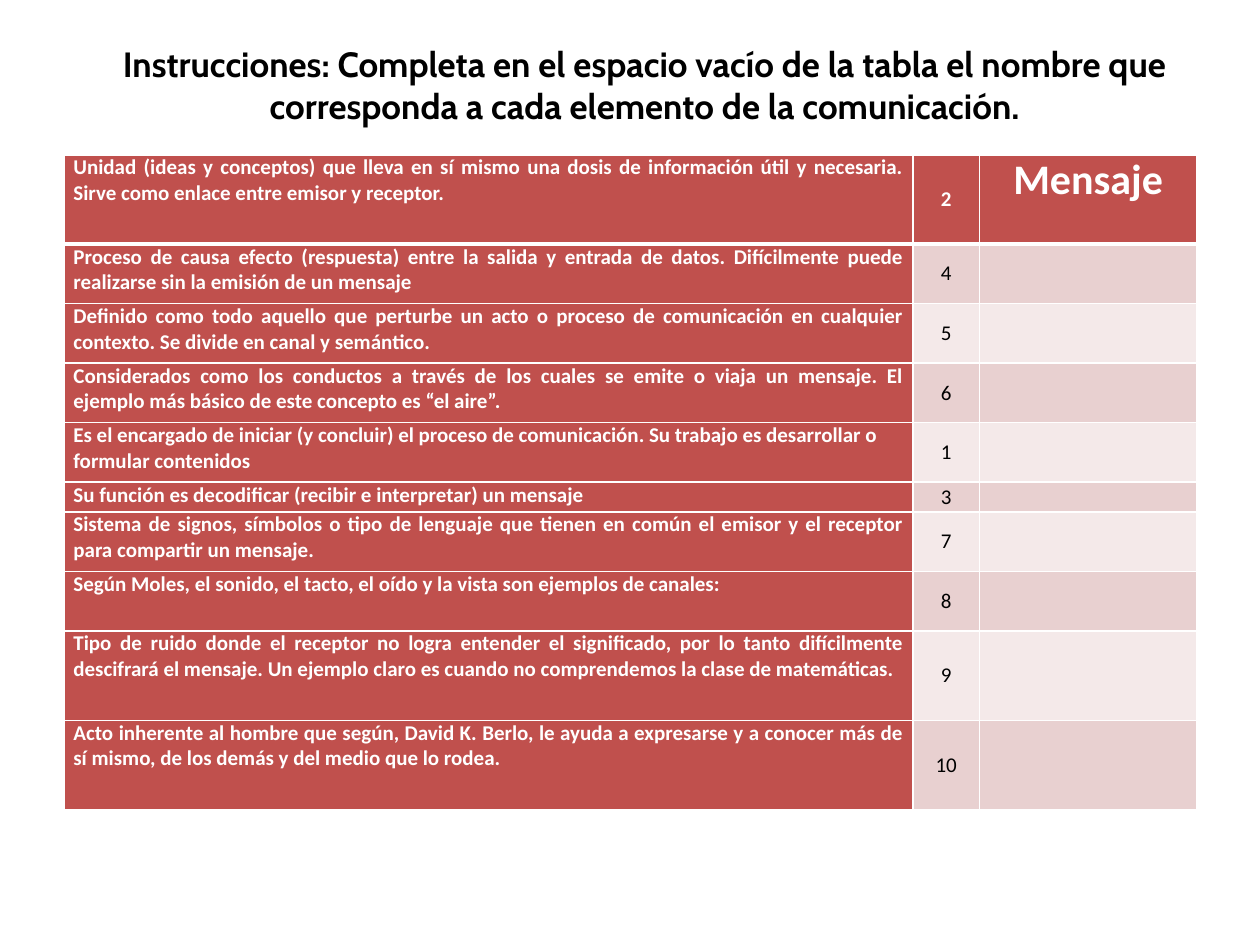
"""Builds a slide with a fill-in table about the elements of communication."""
from dataclasses import dataclass

from lxml import etree
from pptx import Presentation
from pptx import util as u
from pptx.dml.color import RGBColor
from pptx.enum import text
from pptx.oxml import ns

RED, WHITE, BLACK = "C0504D", "FFFFFF", "000000"
BANDS = ("E8D0D0", "F4E9E9")
COLUMN_WIDTHS = (17.1, 1.35, 4.37)
ALIGN = text.PP_ALIGN


@dataclass(frozen=True)
class Element:
    description: str
    number: int
    height: float = 1.2
    answer: str = ""
    align: text.PP_ALIGN = ALIGN.JUSTIFY


ELEMENTS = (
    Element("Unidad (ideas y conceptos) que lleva en sí mismo una dosis de información útil y necesaria. "
            "Sirve como enlace entre emisor y receptor.", 2, 1.8, "Mensaje"),
    Element("Proceso de causa efecto (respuesta) entre la salida y entrada de datos. Difícilmente puede "
            "realizarse sin la emisión de un mensaje", 4),
    Element("Definido como todo aquello que perturbe un acto o proceso de comunicación en cualquier "
            "contexto. Se divide en canal y semántico.", 5),
    Element("Considerados como los conductos a través de los cuales se emite o viaja un mensaje. El "
            "ejemplo más básico de este concepto es “el aire”.", 6),
    Element("Es el encargado de iniciar (y concluir) el proceso de comunicación. Su trabajo es desarrollar o "
            "formular contenidos", 1, align=ALIGN.LEFT),
    Element("Su función es decodificar (recibir e interpretar) un mensaje", 3, 0.6),
    Element("Sistema de signos, símbolos o tipo de lenguaje que tienen en común el emisor y el receptor "
            "para compartir un mensaje.", 7),
    Element("Según Moles, el sonido, el tacto, el oído y la vista son ejemplos de canales:", 8,
            align=ALIGN.LEFT),
    Element("Tipo de ruido donde el receptor no logra entender el significado, por lo tanto difícilmente "
            "descifrará el mensaje. Un ejemplo claro es cuando no comprendemos la clase de matemáticas.", 9, 1.8),
    Element("Acto inherente al hombre que según, David K. Berlo, le ayuda a expresarse y a conocer más de "
            "sí mismo, de los demás y del medio que lo rodea.", 10, 1.8),
)


def rgb(color: str) -> RGBColor:
    return RGBColor.from_string(color)


def write(frame, content: str, *, size: float = 12, font: str = "Calibri", color: str = WHITE,
          bold: bool = True, align: text.PP_ALIGN = ALIGN.CENTER) -> None:
    paragraph = frame.paragraphs[0]
    paragraph.alignment = align
    if not content:
        etree.SubElement(paragraph._p, ns.qn("a:endParaRPr"), sz=str(int(size * 100)))
        return
    run = paragraph.add_run()
    run.text = content
    run.font.size, run.font.name, run.font.bold = u.Pt(size), font, bold
    run.font.color.rgb = rgb(color)


def style_cell(cell, fill: str, top: float, bottom: float) -> None:
    cell.margin_left = cell.margin_right = u.Cm(0.18)
    cell.margin_top = cell.margin_bottom = 0
    properties = cell._tc.get_or_add_tcPr()
    for side, width in (("L", 1), ("R", 1), ("T", top), ("B", bottom)):
        line = etree.SubElement(properties, ns.qn(f"a:ln{side}"), w=str(u.Pt(width)))
        solid = etree.SubElement(line, ns.qn("a:solidFill"))
        etree.SubElement(solid, ns.qn("a:srgbClr"), val=WHITE)
    cell.fill.solid()
    cell.fill.fore_color.rgb = rgb(fill)


def fill_row(table, index: int, element: Element) -> None:
    header = index == 0
    table.rows[index].height = u.Cm(element.height)
    band = RED if header else BANDS[(index - 1) % 2]
    cells = [table.cell(index, column) for column in range(len(COLUMN_WIDTHS))]
    for cell, fill in zip(cells, (RED, band, band)):
        style_cell(cell, fill, top=3 if index == 1 else 1, bottom=3 if header else 1)
    description, number, answer = cells
    write(description.text_frame, element.description, align=element.align)
    number.vertical_anchor = text.MSO_ANCHOR.MIDDLE
    write(number.text_frame, str(element.number), color=WHITE if header else BLACK, bold=header)
    write(answer.text_frame, element.answer, size=24 if element.answer else 12)


def add_elements_table(slide) -> None:
    table = slide.shapes.add_table(
        len(ELEMENTS), len(COLUMN_WIDTHS), u.Cm(1.3), u.Cm(3.12),
        u.Cm(sum(COLUMN_WIDTHS)), u.Cm(sum(element.height for element in ELEMENTS))).table
    for column, width in zip(table.columns, COLUMN_WIDTHS):
        column.width = u.Cm(width)
    for index, element in enumerate(ELEMENTS):
        fill_row(table, index, element)


def add_instructions(slide) -> None:
    frame = slide.shapes.add_textbox(u.Cm(1.5), u.Cm(0.74), u.Cm(23), u.Cm(1.96)).text_frame
    frame.word_wrap = True
    frame.auto_size = text.MSO_AUTO_SIZE.SHAPE_TO_FIT_TEXT
    write(frame, "Instrucciones: Completa en el espacio vacío de la tabla el nombre que "
                 "corresponda a cada elemento de la comunicación.", size=20, font="Cabin", color=BLACK)


def main() -> None:
    presentation = Presentation()
    presentation.slide_width, presentation.slide_height = u.Cm(25.4), u.Cm(19.05)
    slide = presentation.slides.add_slide(presentation.slide_layouts[6])
    add_elements_table(slide)
    add_instructions(slide)
    presentation.save("out.pptx")


if __name__ == "__main__":
    main()
